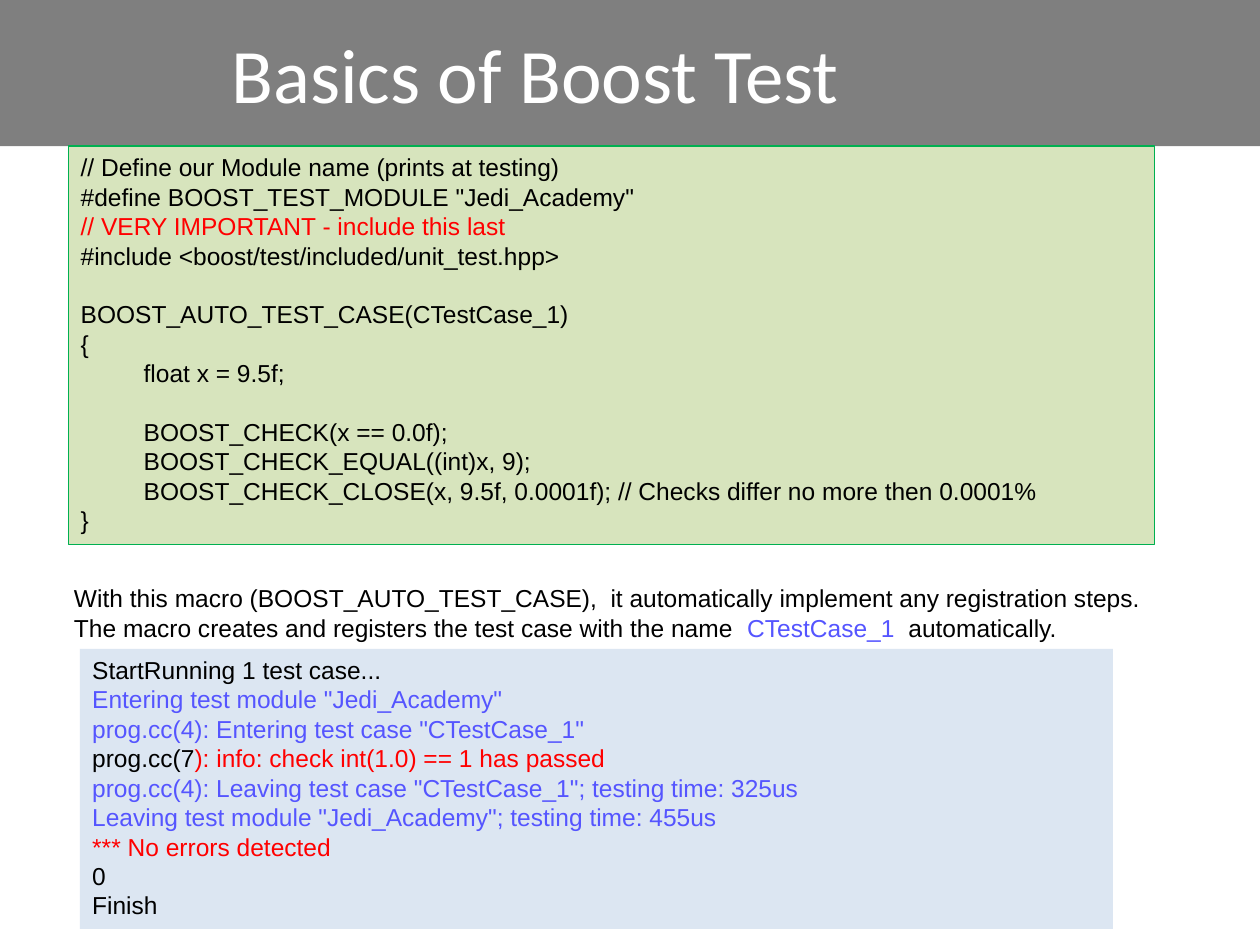
import dataclasses
import typing

import lxml.etree
import pptx
import pptx.dml.color
import pptx.enum.shapes
import pptx.enum.text
import pptx.oxml.ns
import pptx.util

Pt = pptx.util.Pt
Align = pptx.enum.text.PP_ALIGN
TONES = {
    "black": "000000",
    "white": "FFFFFF",
    "red": "FF0000",
    "blue": "5555FF",
    "green": "00B050",
    "lime": "D7E4BD",
    "sky": "DCE6F2",
}
PITCH = 16.8


@dataclasses.dataclass
class Line:
    runs: list[tuple[str, str]]
    gap: float = 0


@dataclasses.dataclass
class Panel:
    left: float
    top: float
    width: float
    height: float
    lines: list[Line]
    fill: typing.Optional[str] = None
    edge: typing.Optional[str] = None


def line(text: str, tone: str = "black", gap: float = 0) -> Line:
    return Line([(text, tone)], gap)


PANELS = [
    Panel(39, 83.5, 620.6, 227.5, [
        line("// Define our Module name (prints at testing)"),
        line('#define BOOST_TEST_MODULE "Jedi_Academy"'),
        line("// VERY IMPORTANT - include this last", "red"),
        line("#include <boost/test/included/unit_test.hpp>"),
        line("BOOST_AUTO_TEST_CASE(CTestCase_1)", gap=PITCH),
        line("{"),
        line("\tfloat x = 9.5f;"),
        line("\tBOOST_CHECK(x == 0.0f);", gap=PITCH),
        line("\tBOOST_CHECK_EQUAL((int)x, 9);"),
        line("\tBOOST_CHECK_CLOSE(x, 9.5f, 0.0001f); // Checks differ no more then 0.0001%"),
        line("}"),
    ], "lime", "green"),
    Panel(35.2, 329.8, 627.2, 41, [
        Line([
            ("With this macro (BOOST_AUTO_TEST_CASE),  it automatically implement any "
             "registration steps. The macro creates and registers the test case with the name  ", "black"),
            ("CTestCase_1 ", "blue"),
            (" automatically.", "black"),
        ]),
    ]),
    Panel(45.6, 370.8, 590.4, 160, [
        line("StartRunning 1 test case..."),
        line('Entering test module "Jedi_Academy"', "blue"),
        line('prog.cc(4): Entering test case "CTestCase_1"', "blue"),
        Line([("prog.cc(7", "black"), ("): info: check int(1.0) == 1 has passed", "red")]),
        line('prog.cc(4): Leaving test case "CTestCase_1"; testing time: 325us', "blue"),
        line('Leaving test module "Jedi_Academy"; testing time: 455us', "blue"),
        line("*** No errors detected", "red"),
        line("0"),
        line("Finish"),
    ], "sky"),
]


def shade(name: str) -> pptx.dml.color.RGBColor:
    return pptx.dml.color.RGBColor.from_string(TONES[name])


def write(par, text: str, *, size: float = 14, font: str = "Arial", tone: str = "black") -> None:
    run = par.add_run()
    run.text = text
    run.font.size = Pt(size)
    run.font.name = font
    run.font.color.rgb = shade(tone)


def block(slide, left: float, top: float, width: float, height: float,
          fill: str, edge: typing.Optional[str] = None):
    shape = slide.shapes.add_shape(
        pptx.enum.shapes.MSO_SHAPE.RECTANGLE, Pt(left), Pt(top), Pt(width), Pt(height))
    shape.shadow.inherit = False
    shape.fill.solid()
    shape.fill.fore_color.rgb = shade(fill)
    if edge:
        shape.line.color.rgb = shade(edge)
        shape.line.width = Pt(0.75)
    else:
        shape.line.fill.background()
    return shape


def draw(slide, panel: Panel) -> None:
    place = (panel.left, panel.top, panel.width, panel.height)
    if panel.fill:
        shape = block(slide, *place, panel.fill, panel.edge)
    else:
        shape = slide.shapes.add_textbox(*map(Pt, place))
    frame = shape.text_frame
    frame.word_wrap = True
    frame.vertical_anchor = pptx.enum.text.MSO_ANCHOR.TOP
    for rank, item in enumerate(panel.lines):
        par = frame.add_paragraph() if rank else frame.paragraphs[0]
        par.alignment = Align.LEFT
        if item.gap:
            par.space_before = Pt(item.gap)
        for text, tone in item.runs:
            write(par, text, tone=tone)


def head(slide, text: str) -> None:
    title = slide.shapes.title
    title.left, title.top, title.width, title.height = map(Pt, (0, 0, 612, 83.5))
    title.text_frame.vertical_anchor = pptx.enum.text.MSO_ANCHOR.MIDDLE
    par = title.text_frame.paragraphs[0]
    par.alignment = Align.CENTER
    write(par, text, size=44, font="Calibri", tone="white")

    band = block(slide, 0, 0, 720, 83.5, "black")
    qn = pptx.oxml.ns.qn
    tint = band.element.spPr.find(qn("a:solidFill")).find(qn("a:srgbClr"))
    lxml.etree.SubElement(tint, qn("a:alpha")).set("val", "50000")
    title.element.addprevious(band.element)


def main() -> None:
    deck = pptx.Presentation()
    deck.slide_width, deck.slide_height = Pt(720), Pt(540)
    slide = deck.slides.add_slide(deck.slide_layouts[5])
    head(slide, "Basics of Boost Test")
    for panel in PANELS:
        draw(slide, panel)
    deck.save("out.pptx")


if __name__ == "__main__":
    main()
